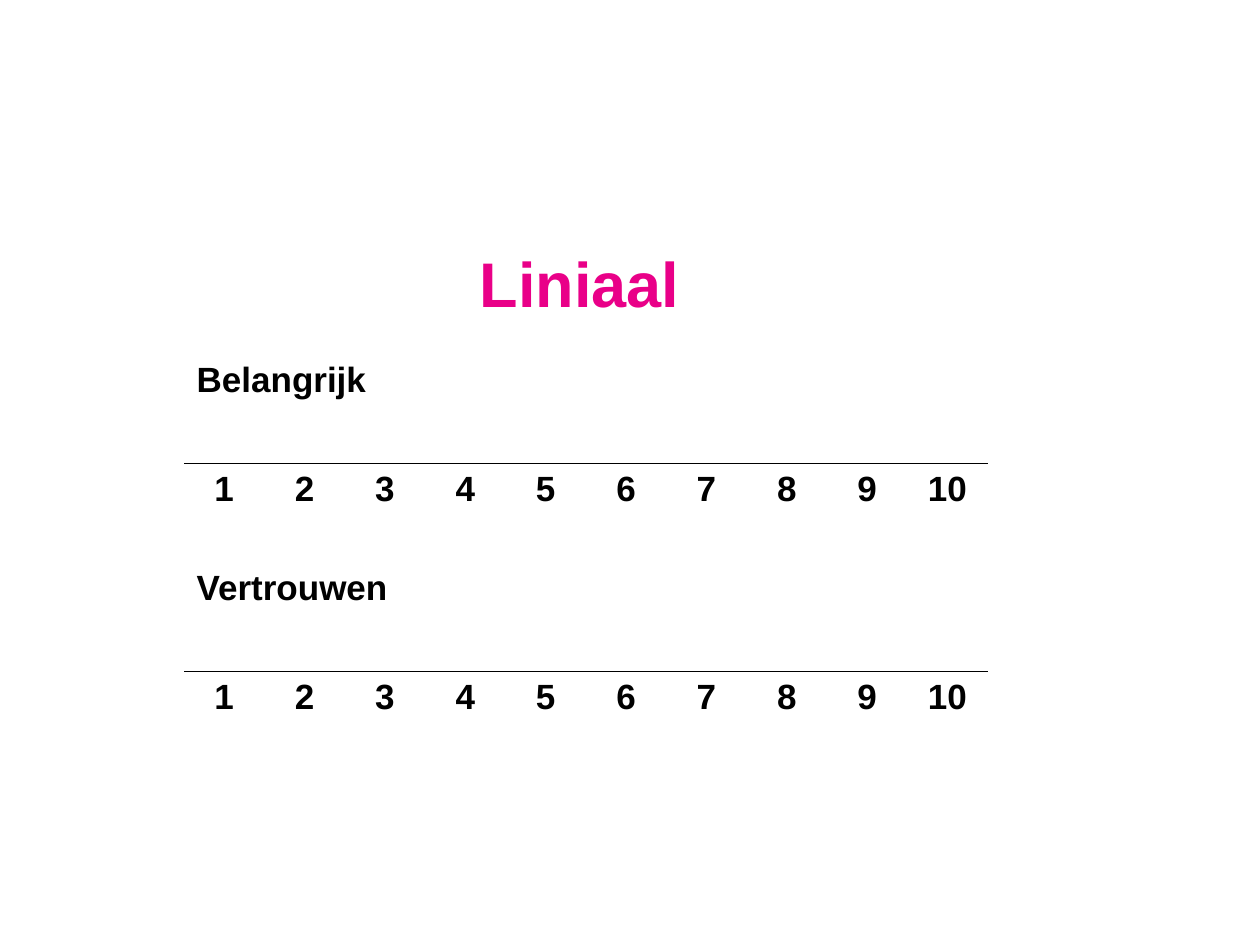
from dataclasses import dataclass

from lxml import etree
from pptx import Presentation
from pptx.dml.color import RGBColor
from pptx.enum.text import MSO_ANCHOR, PP_ALIGN
from pptx.oxml.ns import qn
from pptx.util import Cm, Pt

LEFT = PP_ALIGN.LEFT
CENTER = PP_ALIGN.CENTER
MIDDLE = MSO_ANCHOR.MIDDLE

FONT = "Arial"
PINK = "E90088"
BLACK = "000000"
NO_GRID_STYLE = "{2D5ABB26-0587-4C30-8999-92F81FD0307C}"

STEPS = 10
RULER_LEFT = 3.71
STEP_WIDTH = 1.62
ROW_HEIGHT = 1.1


@dataclass
class Ruler:
    label: str
    top: float


RULERS = [Ruler("Belangrijk", 7.14), Ruler("Vertrouwen", 11.33)]


def rgb(colour: str) -> RGBColor:
    return RGBColor.from_string(colour)


def write(frame, text: str, size: int, colour: str, align) -> None:
    paragraph = frame.paragraphs[0]
    paragraph.text = text
    paragraph.alignment = align
    paragraph.font.name = FONT
    paragraph.font.size = Pt(size)
    paragraph.font.bold = True
    paragraph.font.color.rgb = rgb(colour)


def add_border(cell, side: str) -> None:
    """Draw a thin black line on one side of a cell: lnT or lnB."""
    line = etree.Element(qn(f"a:{side}"), w=str(Pt(1)))
    fill = etree.SubElement(line, qn("a:solidFill"))
    etree.SubElement(fill, qn("a:srgbClr"), val=BLACK)
    cell._tc.get_or_add_tcPr().insert(0, line)


def add_title(slide, text: str) -> None:
    title = slide.shapes.add_textbox(Cm(0.89), Cm(4.11), Cm(21.59), Cm(3.18))
    title.text_frame.word_wrap = True
    title.text_frame.vertical_anchor = MIDDLE
    write(title.text_frame, text, 36, PINK, CENTER)


def add_ruler(slide, ruler: Ruler) -> None:
    """Add a label row, an empty row and a row of numbers under a line."""
    table = slide.shapes.add_table(
        3, STEPS, Cm(RULER_LEFT), Cm(ruler.top),
        Cm(STEP_WIDTH * STEPS), Cm(ROW_HEIGHT * 3)).table
    table.first_row = False
    table.horz_banding = False
    table._tbl.tblPr.find(qn("a:tableStyleId")).text = NO_GRID_STYLE
    for row in table.rows:
        row.height = Cm(ROW_HEIGHT)
    for cell in table.iter_cells():
        cell.fill.background()

    table.cell(0, 0).merge(table.cell(0, STEPS - 1))
    write(table.cell(0, 0).text_frame, ruler.label, 20, BLACK, LEFT)
    for step in range(STEPS):
        table.columns[step].width = Cm(STEP_WIDTH)
        number = table.cell(2, step)
        write(number.text_frame, str(step + 1), 20, BLACK, CENTER)
        add_border(table.cell(1, step), "lnB")
        add_border(number, "lnT")


def main() -> None:
    deck = Presentation()
    deck.slide_width = Cm(25.4)
    deck.slide_height = Cm(19.05)
    slide = deck.slides.add_slide(deck.slide_layouts[6])
    add_title(slide, "Liniaal")
    for ruler in RULERS:
        add_ruler(slide, ruler)
    deck.save("out.pptx")


if __name__ == "__main__":
    main()
